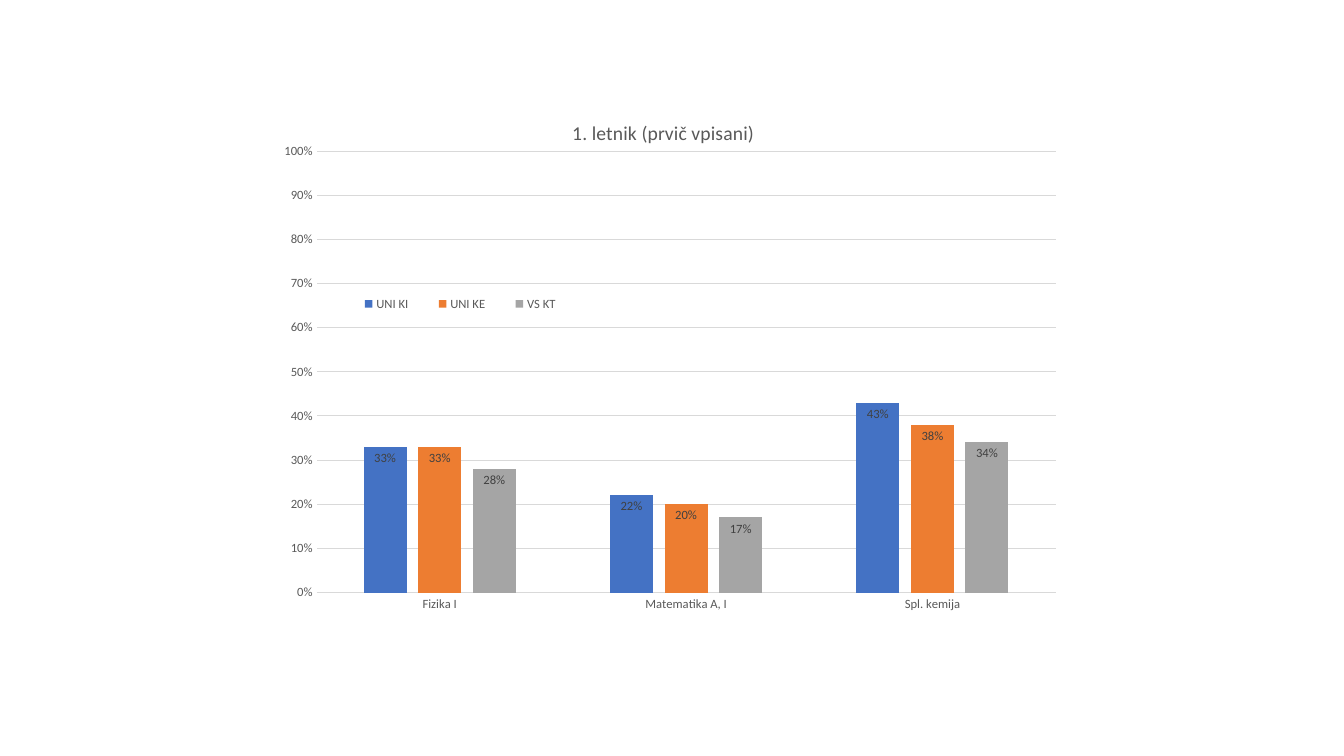
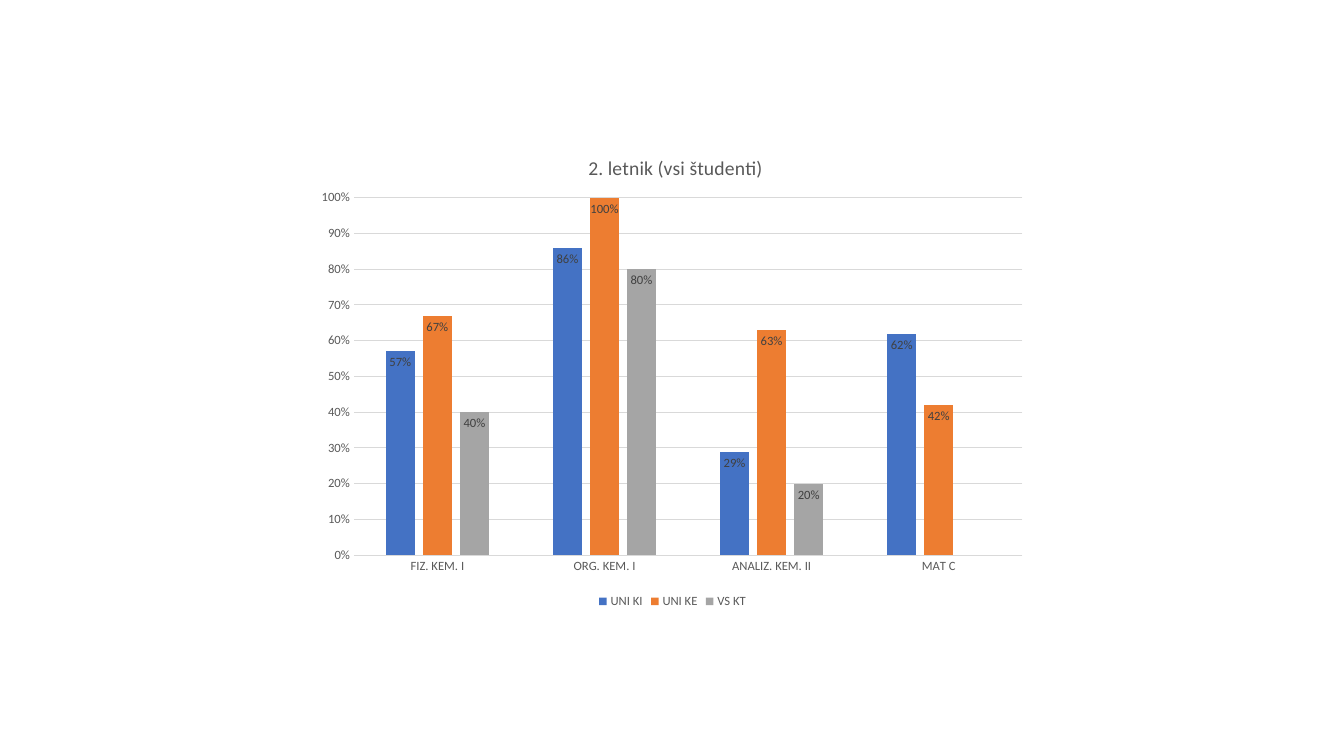
from dataclasses import dataclass
from lxml import etree
from pptx import Presentation
from pptx import util as u
from pptx.chart.data import CategoryChartData
from pptx.dml.color import RGBColor
from pptx.enum import chart as ec


@dataclass(frozen=True)
class Theme:
    face: str = "Calibri"
    ink: str = "595959"
    mark: str = "404040"
    rule: str = "D9D9D9"
    hues: tuple = ("4472C4", "ED7D31", "A5A5A5")
    head: int = 14
    small: int = 9
    thin: float = 0.75


T = Theme()
NS = "http://schemas.openxmlformats.org/drawingml/2006/chart"
NAMES = ("UNI KI", "UNI KE", "VS KT")


def style(font, size, color):
    font.name = T.face
    font.size = u.Pt(size)
    font.bold = False
    font.color.rgb = RGBColor.from_string(color)


def rule(line):
    line.color.rgb = RGBColor.from_string(T.rule)
    line.width = u.Pt(T.thin)


def pin(node, index, box, area, inner=False):
    for old in node.findall(f"{{{NS}}}layout"):
        node.remove(old)
    lay = etree.Element(f"{{{NS}}}layout")
    man = etree.SubElement(lay, f"{{{NS}}}manualLayout")

    def put(tag, val):
        etree.SubElement(man, f"{{{NS}}}{tag}").set("val", str(val))

    if inner:
        put("layoutTarget", "inner")
    put("xMode", "edge")
    put("yMode", "edge")
    sides = (box[2], box[3]) * 2
    for tag, val, side in zip("xywh", area, sides):
        put(tag, round(val / side, 4))
    node.insert(index, lay)


def set_title(chart, label, box, spot):
    chart.has_title = True
    para = chart.chart_title.text_frame.paragraphs[0]
    para.text = label
    style(para.font, T.head, T.ink)
    chart.chart_title.include_in_layout = False
    pin(chart.chart_title.element, 1, box, spot)


def set_axes(chart):
    cat, val = chart.category_axis, chart.value_axis
    for axis in (cat, val):
        axis.major_tick_mark = axis.minor_tick_mark = ec.XL_TICK_MARK.NONE
        style(axis.tick_labels.font, T.small, T.ink)
    rule(cat.format.line)
    val.format.line.fill.background()
    val.minimum_scale, val.maximum_scale, val.major_unit = 0, 1, 0.1
    val.has_major_gridlines = True
    rule(val.major_gridlines.format.line)
    val.tick_labels.number_format = "0%"
    val.tick_labels.number_format_is_linked = False


def set_bars(chart):
    plot = chart.plots[0]
    plot.gap_width, plot.overlap = 219, -27
    plot.vary_by_categories = False
    for bar, hue in zip(plot.series, T.hues):
        bar.invert_if_negative = False
        bar.format.fill.solid()
        bar.format.fill.fore_color.rgb = RGBColor.from_string(hue)
        tags = bar.data_labels
        tags.show_value = True
        tags.position = ec.XL_LABEL_POSITION.INSIDE_END
        tags.number_format = "0%"
        tags.number_format_is_linked = False
        style(tags.font, T.small, T.mark)


def set_key(chart, box, area):
    chart.has_legend = True
    key = chart.legend
    key.position = ec.XL_LEGEND_POSITION.BOTTOM
    key.include_in_layout = False
    style(key.font, T.small, T.ink)
    if area:
        pin(chart.element.find(f".//{{{NS}}}legend"), 1, box, area)


def chart_slide(deck, label, box, cats, rows, spot, area, key=None):
    slide = deck.slides.add_slide(deck.slide_layouts[6])
    data = CategoryChartData(number_format="0%")
    data.categories = cats
    for name, row in zip(NAMES, rows):
        data.add_series(name, row)
    frame = slide.shapes.add_chart(
        ec.XL_CHART_TYPE.COLUMN_CLUSTERED, *map(u.Inches, box), data)
    chart = frame.chart
    style(chart.font, 10, "000000")
    set_title(chart, label, box, spot)
    set_axes(chart)
    set_bars(chart)
    set_key(chart, box, key)
    pin(chart.element.find(f".//{{{NS}}}plotArea"), 0, box, area, True)


def main():
    deck = Presentation()
    deck.slide_width, deck.slide_height = u.Inches(13.33), u.Inches(7.5)
    chart_slide(
        deck, "1. letnik (prvič vpisani)", (2.59, 0.92, 8.05, 5.49),
        ("Fizika I", "Matematika A, I", "Spl. kemija"),
        ((0.33, 0.22, 0.43), (0.33, 0.2, 0.38), (0.28, 0.17, 0.34)),
        spot=(3.05, 0.23), area=(0.55, 0.58, 7.33, 4.38),
        key=(0.77, 1.93, 2.41, 0.33))
    chart_slide(
        deck, "2. letnik (vsi študenti)", (3.05, 1.3, 7.24, 4.78),
        ("FIZ. KEM. I", "ORG. KEM. I", "ANALIZ. KEM. II", "MAT C"),
        ((0.57, 0.86, 0.29, 0.62), (0.67, 1, 0.63, 0.42),
         (0.4, 0.8, 0.2, None)),
        spot=(2.75, 0.2), area=(0.46, 0.66, 6.63, 3.55))
    deck.save("out.pptx")


if __name__ == "__main__":
    main()
